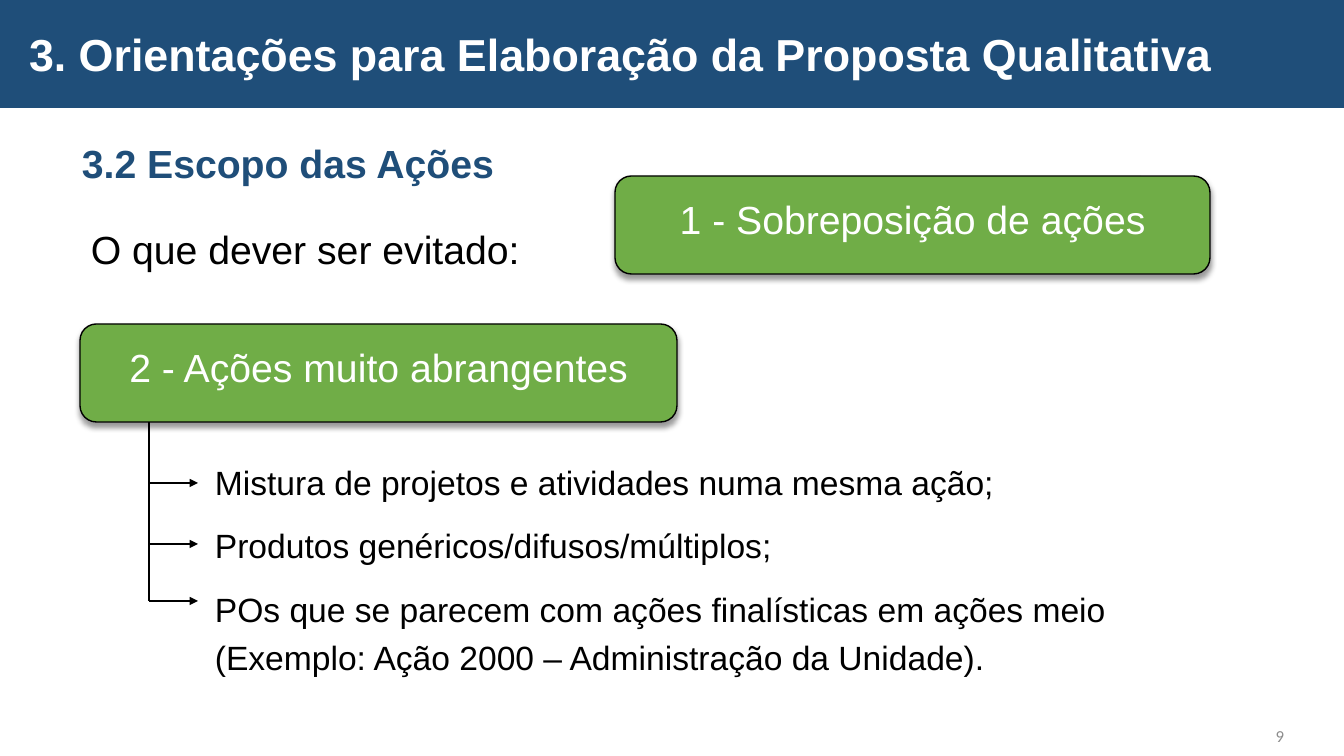
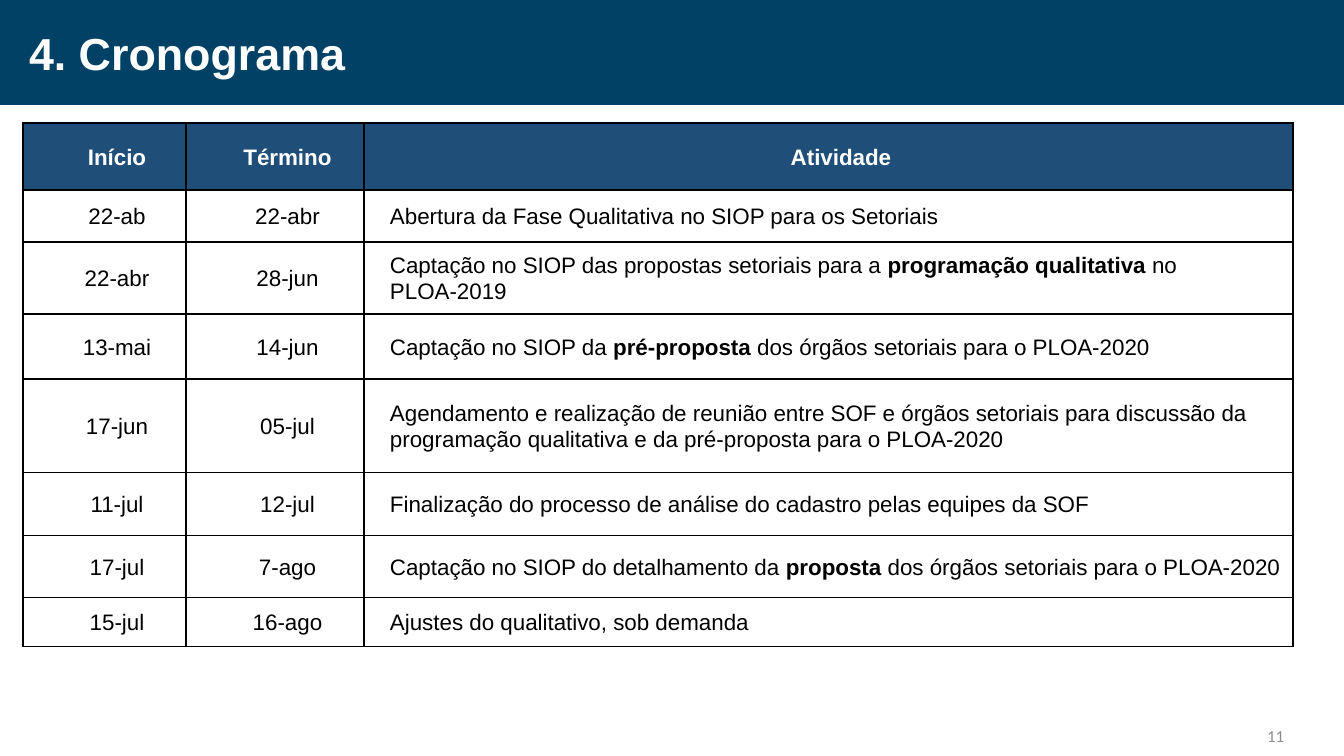
from lxml import etree
from pptx import Presentation
from pptx.dml.color import RGBColor
from pptx.enum.shapes import MSO_CONNECTOR, MSO_SHAPE
from pptx.enum.text import MSO_ANCHOR, PP_ALIGN
from pptx.oxml import parse_xml
from pptx.oxml.ns import nsdecls, qn
from pptx.util import Pt

LEFT, CENTER, RIGHT = PP_ALIGN.LEFT, PP_ALIGN.CENTER, PP_ALIGN.RIGHT
TOP, MIDDLE = MSO_ANCHOR.TOP, MSO_ANCHOR.MIDDLE
RECTANGLE, ROUNDED = MSO_SHAPE.RECTANGLE, MSO_SHAPE.ROUNDED_RECTANGLE
STRAIGHT = MSO_CONNECTOR.STRAIGHT

BLACK = RGBColor(0x00, 0x00, 0x00)
WHITE = RGBColor(0xFF, 0xFF, 0xFF)
GRAY = RGBColor(0x8C, 0x8C, 0x8C)
BLUE = RGBColor(0x1F, 0x4E, 0x79)
DARK_BLUE = RGBColor(0x00, 0x41, 0x65)
GREEN = RGBColor(0x70, 0xAD, 0x47)

WIDTH, HEIGHT = 1344, 756
PX_PER_INCH = 100.8

SHADOW = (
    f'<a:outerShdw {nsdecls("a")} blurRad="50800" dist="38100" dir="5400000" rotWithShape="0">'
    '<a:srgbClr val="000000"><a:alpha val="40000"/></a:srgbClr></a:outerShdw>'
)
BORDER = (
    '<a:{side} {ns} w="12700"><a:solidFill><a:srgbClr val="{color}"/></a:solidFill></a:{side}>'
)

SCHEDULE = [
    ("Início", "Término", "Atividade"),
    ("22-ab", "22-abr", "Abertura da Fase Qualitativa no SIOP para os Setoriais"),
    ("22-abr", "28-jun", "Captação no SIOP das propostas setoriais para a "
     "*programação qualitativa* no PLOA-2019"),
    ("13-mai", "14-jun", "Captação no SIOP da *pré-proposta* dos órgãos setoriais "
     "para o PLOA-2020"),
    ("17-jun", "05-jul", "Agendamento e realização de reunião entre SOF e órgãos setoriais "
     "para discussão da programação qualitativa e da pré-proposta para o PLOA-2020"),
    ("11-jul", "12-jul", "Finalização do processo de análise do cadastro pelas equipes da SOF"),
    ("17-jul", "7-ago", "Captação no SIOP do detalhamento da *proposta* dos órgãos setoriais "
     "para o PLOA-2020"),
    ("15-jul", "16-ago", "Ajustes do qualitativo, sob demanda"),
]


def px(length):
    """Turn a length in px into EMU."""
    return round(length * 914400 / PX_PER_INCH)


class Deck:
    """Hold the shared style and the current slide."""

    def __init__(self):
        """Start an empty presentation."""
        self.presentation = Presentation()
        self.presentation.slide_width = px(WIDTH)
        self.presentation.slide_height = px(HEIGHT)
        self.slide = None

    def new_slide(self, title, number, band_height, band_color):
        """Add a slide with its title band and page number."""
        self.slide = self.presentation.slides.add_slide(self.presentation.slide_layouts[6])
        self.text(str(number), (1255, 716, 39, 40), 12, GRAY, align=RIGHT,
                  anchor=MIDDLE, font_name="Calibri")
        band = self.box(RECTANGLE, (0, 0, WIDTH, band_height), band_color)
        frame = band.text_frame
        frame.margin_left = frame.margin_right = frame.margin_top = frame.margin_bottom = 0
        self.fill_frame(frame, title, 32, WHITE, bold=True, anchor=MIDDLE, indent=29)

    def fill_frame(self, frame, text, size, color, bold=False, align=LEFT, anchor=TOP,
                   indent=0, first_line=0, spacing=None, font_name="Arial"):
        """Fill a text frame with one paragraph; asterisks enclose bold words."""
        frame.word_wrap = True
        frame.vertical_anchor = anchor
        paragraph = frame.paragraphs[0]
        properties = paragraph._p.get_or_add_pPr()
        properties.set("marL", str(px(indent)))
        properties.set("indent", str(px(first_line)))
        paragraph.alignment = align
        if spacing:
            paragraph.line_spacing = spacing
        font = paragraph.font
        font.name, font.size, font.bold = font_name, Pt(size), bold
        font.color.rgb = color
        for index, part in enumerate(text.split("*")):
            run = paragraph.add_run()
            run.text = part
            if index % 2:
                run.font.bold = True

    def text(self, text, area, size, color, **style):
        """Add a text box."""
        shape = self.slide.shapes.add_textbox(*map(px, area))
        self.fill_frame(shape.text_frame, text, size, color, **style)

    def box(self, kind, area, color):
        """Add a filled shape without outline or shadow."""
        shape = self.slide.shapes.add_shape(kind, *map(px, area))
        shape.shadow.inherit = False
        shape.fill.solid()
        shape.fill.fore_color.rgb = color
        shape.line.fill.background()
        return shape

    def card(self, text, area):
        """Add a green rounded card with a soft shadow."""
        card = self.box(ROUNDED, area, GREEN)
        card.line.color.rgb = BLACK
        card.line.width = Pt(1)
        card._element.spPr.find(qn("a:effectLst")).append(parse_xml(SHADOW))
        card.text_frame.margin_top = 0
        card.text_frame.margin_bottom = px(12)
        self.fill_frame(card.text_frame, text, 28, WHITE, align=CENTER, anchor=MIDDLE)

    def line(self, start, end, arrow=False):
        """Add a black line, with an arrowhead if asked."""
        connector = self.slide.shapes.add_connector(STRAIGHT, *map(px, start + end))
        connector.line.color.rgb = BLACK
        connector.line.width = Pt(1.5)
        if arrow:
            outline = connector.line._get_or_add_ln()
            etree.SubElement(outline, qn("a:tailEnd"), type="triangle")
        etree.SubElement(connector._element.spPr, qn("a:effectLst"))

    def table(self, rows, left, top, widths, heights):
        """Add a bordered table with a blue header row."""
        area = (left, top, sum(widths), sum(heights))
        table = self.slide.shapes.add_table(len(rows), len(widths), *map(px, area)).table
        table.first_row = table.horz_banding = False
        for column, width in zip(table.columns, widths):
            column.width = px(width)
        for row, height in zip(table.rows, heights):
            row.height = px(height)
        for row_index, values in enumerate(rows):
            for column_index, value in enumerate(values):
                cell = table.cell(row_index, column_index)
                self.cell(cell, value, row_index == 0, column_index == len(widths) - 1)

    def cell(self, cell, text, header, last_column):
        """Style and fill one table cell."""
        properties = cell._tc.get_or_add_tcPr()
        for side in ("lnL", "lnR", "lnT", "lnB"):
            border = BORDER.format(side=side, ns=nsdecls("a"), color=BLACK)
            properties.append(parse_xml(border))
        cell.fill.solid()
        cell.fill.fore_color.rgb = BLUE if header else WHITE
        cell.margin_left = cell.margin_right = px(7)
        cell.margin_top = cell.margin_bottom = 0
        if last_column and not header:
            layout = {"indent": 19}
        else:
            layout = {"align": CENTER, "indent": 50, "first_line": -25}
        self.fill_frame(cell.text_frame, text, 16, WHITE if header else BLACK,
                        bold=header, spacing=1.07, **layout)
        cell.vertical_anchor = MIDDLE


def add_scope_slide(deck):
    """Build the slide on what to avoid in the scope of actions."""
    deck.new_slide("3. Orientações para Elaboração da Proposta Qualitativa", 9, 108, BLUE)
    deck.text("3.2 Escopo das Ações", (12, 134, 1306, 57), 28, BLUE, bold=True, indent=60)
    deck.text("O que dever ser evitado:", (39, 197, 1292, 82), 28, BLACK,
              indent=42, spacing=1.5)
    deck.card("1 - Sobreposição de ações", (615, 176, 595, 98))
    deck.card("2 - Ações muito abrangentes", (80, 324, 597, 98))

    items = [
        ("Mistura de projetos e atividades numa mesma ação;", 457, 483, None),
        ("Produtos genéricos/difusos/múltiplos;", 520, 544, None),
        ("POs que se parecem com ações finalísticas em ações meio "
         "(Exemplo: Ação 2000 – Administração da Unidade).", 577, 601, Pt(34)),
    ]
    stem = 149
    deck.line((stem, 422), (stem, items[-1][2]))
    for text, top, arrow_y, spacing in items:
        deck.line((stem, arrow_y), (198, arrow_y), arrow=True)
        deck.text(text, (205, top, 1001, 50), 24, BLACK, spacing=spacing)


def add_schedule_slide(deck):
    """Build the slide with the schedule table."""
    deck.new_slide("4. Cronograma", 11, 105, DARK_BLUE)
    deck.table(SCHEDULE, 23, 123, (163, 178, 929), (67, 52, 72, 65, 94, 63, 62, 49))


def main():
    """Build and save the presentation."""
    deck = Deck()
    add_scope_slide(deck)
    add_schedule_slide(deck)
    deck.presentation.save("out.pptx")


if __name__ == "__main__":
    main()
